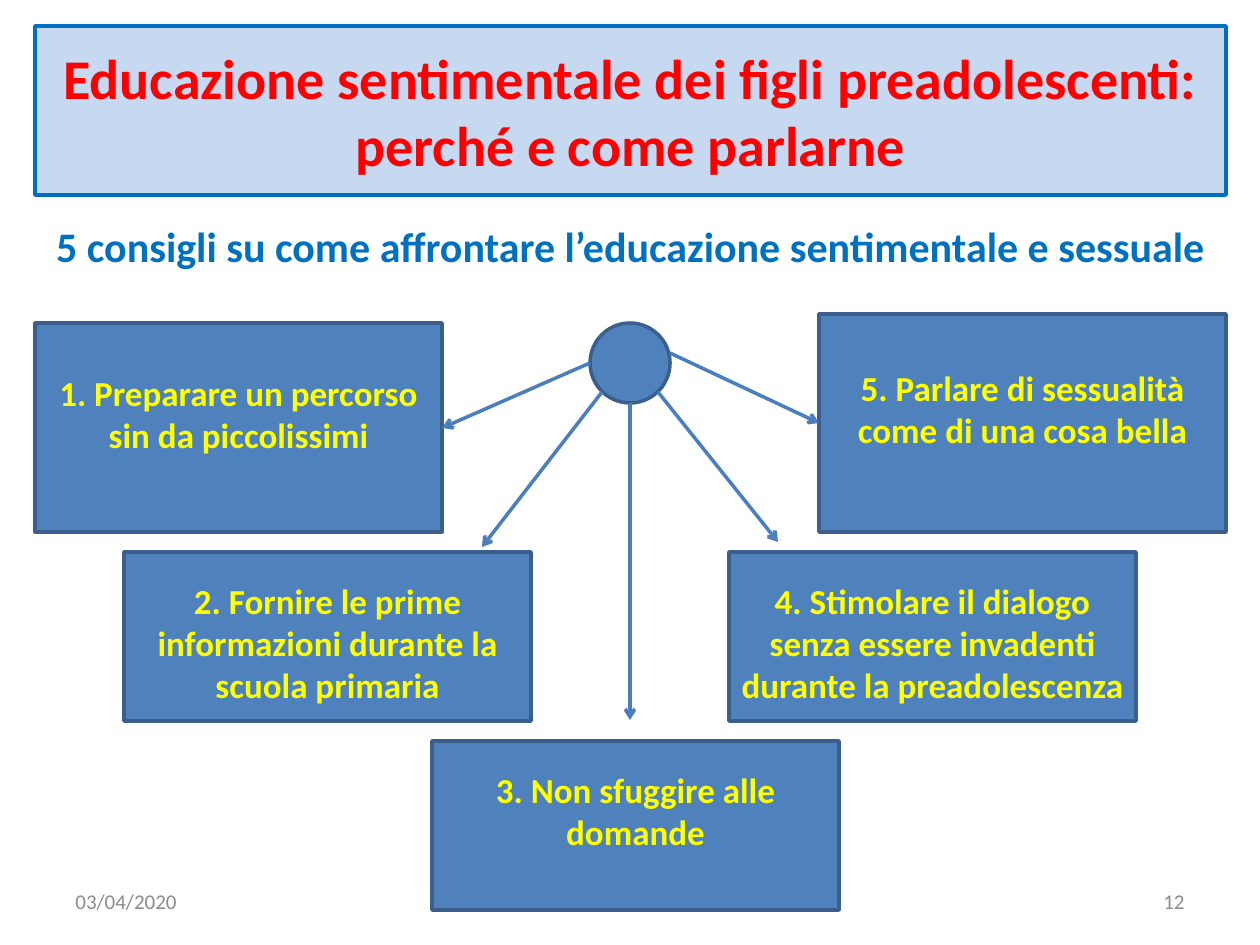
import pptx
import pptx.util
import pptx.dml.color
import pptx.enum.shapes
import pptx.enum.text
import pptx.oxml
import pptx.oxml.ns

RGBColor = pptx.dml.color.RGBColor
PALE_BLUE = RGBColor(0xC6, 0xD9, 0xF1)
BLUE = RGBColor(0x00, 0x70, 0xC0)
RED = RGBColor(0xFF, 0x00, 0x00)
YELLOW = RGBColor(0xFF, 0xFF, 0x00)
STEEL = RGBColor(0x4F, 0x81, 0xBD)
DARK_STEEL = RGBColor(0x3A, 0x5F, 0x8C)
ARROW_BLUE = RGBColor(0x4B, 0x7E, 0xBC)
GREY = RGBColor(0x8C, 0x8C, 0x8C)

PX = 914400 / 126
ALIGN = pptx.enum.text.PP_ALIGN
ANCHOR = pptx.enum.text.MSO_ANCHOR
SHAPE = pptx.enum.shapes.MSO_SHAPE


def emu(*lengths):
    return [pptx.util.Emu(round(length * PX)) for length in lengths]


def write(shape, text, size, color, bold, align, anchor):
    frame = shape.text_frame
    frame.word_wrap = True
    frame.vertical_anchor = anchor
    frame.text = text
    paragraph = frame.paragraphs[0]
    paragraph.alignment = align
    paragraph.font.name = "Calibri"
    paragraph.font.size = pptx.util.Pt(size)
    paragraph.font.bold = bold
    paragraph.font.color.rgb = color


presentation = pptx.Presentation()
presentation.slide_width, presentation.slide_height = emu(1260, 945)
slide = presentation.slides.add_slide(presentation.slide_layouts[5])

title = slide.shapes.title
title.left, title.top, title.width, title.height = emu(35, 26, 1191, 169)
title.fill.solid()
title.fill.fore_color.rgb = PALE_BLUE
title.line.color.rgb = BLUE
title.line.width = pptx.util.Pt(2)
write(title, "Educazione sentimentale dei figli preadolescenti: perché e come parlarne",
      32, RED, True, ALIGN.CENTER, ANCHOR.MIDDLE)

captions = [
    (63, 876, 294, 50, "03/04/2020", 12, GREY, False, ALIGN.LEFT, ANCHOR.MIDDLE),
    (903, 876, 294, 50, "12", 12, GREY, False, ALIGN.RIGHT, ANCHOR.MIDDLE),
    (35, 214, 1191, 63, "5 consigli su come affrontare l’educazione sentimentale e sessuale",
     24, BLUE, True, ALIGN.CENTER, ANCHOR.TOP),
]
for left, top, width, height, *content in captions:
    caption = slide.shapes.add_textbox(*emu(left, top, width, height))
    write(caption, *content)

hub = slide.shapes.add_shape(SHAPE.OVAL, *emu(590, 323, 80, 80))

TIP_WIDTH = 407
tips = [
    (35, 323, 209, 48, "1. Preparare un percorso sin da piccolissimi"),
    (124, 552, 169, 27, "2. Fornire le prime informazioni durante la scuola primaria"),
    (432, 741, 169, 27, "3. Non sfuggire alle domande"),
    (729, 552, 169, 27, "4. Stimolare il dialogo senza essere invadenti durante la preadolescenza"),
    (819, 314, 218, 52, "5. Parlare di sessualità come di una cosa bella"),
]
nodes = [hub]
for left, top, height, inset, text in tips:
    tip = slide.shapes.add_shape(SHAPE.RECTANGLE, *emu(left, top, TIP_WIDTH, height))
    frame = tip.text_frame
    frame.margin_left, frame.margin_top, frame.margin_right = emu(6, inset, 6)
    write(tip, text, 20, YELLOW, True, ALIGN.CENTER, ANCHOR.TOP)
    nodes.append(tip)

for node in nodes:
    node.shadow.inherit = False
    node.fill.solid()
    node.fill.fore_color.rgb = STEEL
    node.line.color.rgb = DARK_STEEL
    node.line.width = pptx.util.Pt(2)

arrows = [
    (590, 363, 442, 428),
    (602, 392, 482, 547),
    (630, 403, 630, 720),
    (658, 392, 778, 542),
    (670, 353, 819, 423),
]
for ends in arrows:
    arrow = slide.shapes.add_connector(pptx.enum.shapes.MSO_CONNECTOR.STRAIGHT, *emu(*ends))
    arrow.line.color.rgb = ARROW_BLUE
    arrow.line.width = pptx.util.Pt(2)
    head = pptx.oxml.parse_xml(
        f'<a:tailEnd {pptx.oxml.ns.nsdecls("a")} type="arrow"/>')
    arrow.line._get_or_add_ln().append(head)
    no_effects = pptx.oxml.parse_xml(f'<a:effectLst {pptx.oxml.ns.nsdecls("a")}/>')
    arrow._element.spPr.append(no_effects)

presentation.save("out.pptx")
